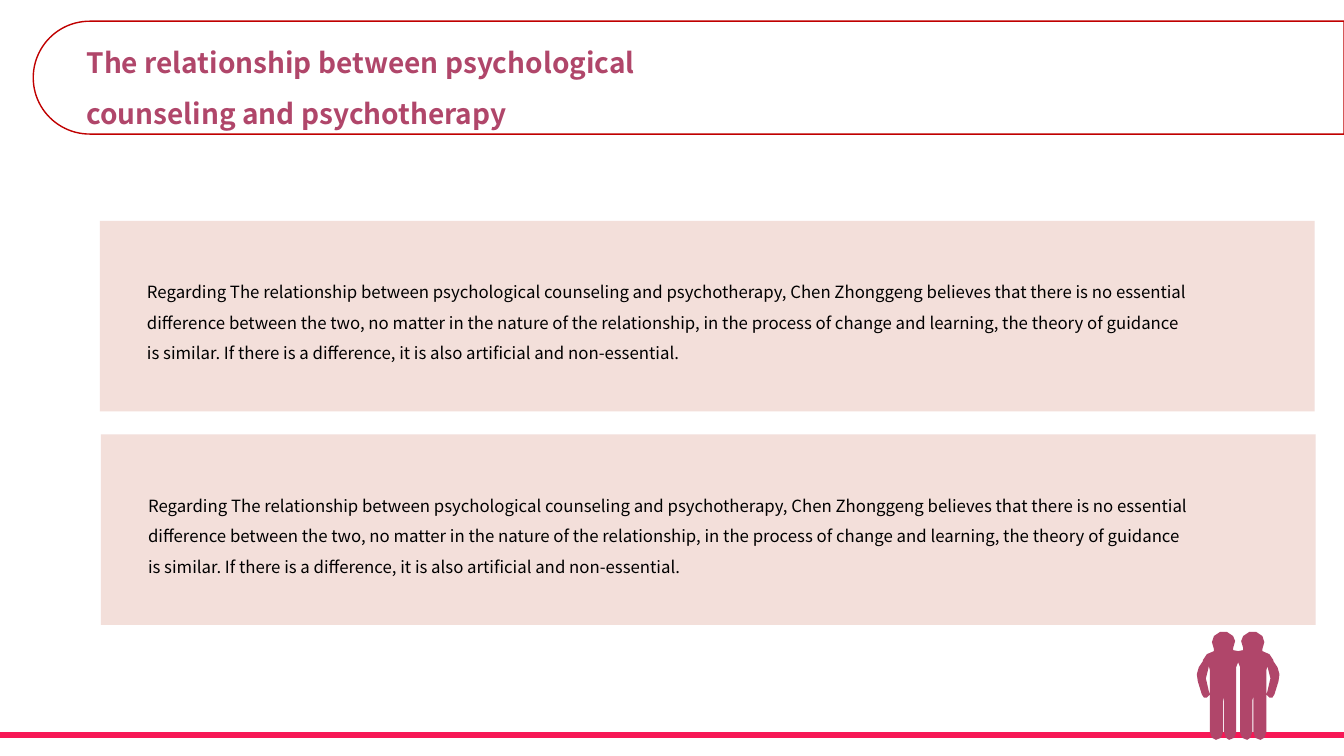
from dataclasses import dataclass

from lxml import etree
from pptx import Presentation
from pptx.dml.color import RGBColor
from pptx.enum import shapes, text
from pptx.oxml import ns
from pptx import util as u

# Grid: 133.3 columns by 75 rows, each a tenth of an inch
COLUMNS, ROWS = 133.3, 75
CELL = u.Inches(0.1)

FONT = "Noto Sans CJK SC"
BLACK = RGBColor(0x00, 0x00, 0x00)
PLUM = RGBColor(0xB0, 0x46, 0x6A)
BLUSH = RGBColor(0xEE, 0xD2, 0xCB)
DARK_RED = RGBColor(0xC0, 0x00, 0x00)
PINK = RGBColor(0xF7, 0x18, 0x56)

TITLE = "The relationship between psychological counseling and psychotherapy"
OPINION = (
    "Regarding The relationship between psychological counseling and psychotherapy, "
    "Chen Zhonggeng believes that there is no essential difference between the two, "
    "no matter in the nature of the relationship, in the process of change and learning, "
    "the theory of guidance is similar. If there is a difference, it is also artificial "
    "and non-essential."
)

# Right-hand person: columns from the middle of the pair, rows from the top
PERSON = [
    (0, 1.9), (0.5, 1.8), (0.5, 1.6), (0.3, 0.9), (0.5, 0.4), (1.1, 0),
    (1.8, 0), (2.4, 0.4), (2.6, 1), (2.4, 1.7), (2.4, 1.9), (3.1, 2.2),
    (3.5, 2.8), (3.5, 2.9), (3.9, 3.5), (4.1, 4.2), (4, 4.9), (3.6, 6.2),
    (3.4, 6.5), (3.1, 6.5), (2.8, 6.2), (2.9, 5.9), (3.2, 4.6), (2.9, 3.4),
    (2.8, 3.8), (2.8, 9.9), (2.6, 10.5), (2.2, 10.7), (1.7, 10.5), (1.5, 9.9),
    (1.5, 6.4), (1.4, 6.8), (1.4, 9.9), (1.2, 10.5), (0.9, 10.7), (0.4, 10.5),
    (0.2, 10), (0.2, 3.5), (0, 3),
]


@dataclass
class Frame:
    column: float
    row: float
    columns: float
    rows: float

    def lengths(self) -> list[int]:
        return [cells(n) for n in (self.column, self.row, self.columns, self.rows)]


def cells(count: float) -> int:
    return round(count * CELL)


def add_words(page, frame: Frame, words: str, size: int, color: RGBColor, bold: bool) -> None:
    box = page.shapes.add_textbox(*frame.lengths())
    box.text_frame.word_wrap = True
    box.text_frame.auto_size = text.MSO_AUTO_SIZE.SHAPE_TO_FIT_TEXT
    para = box.text_frame.paragraphs[0]
    para.line_spacing = 1.5
    span = para.add_run()
    span.text = words
    font_format = {"name": FONT, "size": u.Pt(size), "bold": bold}
    for name, value in font_format.items():
        setattr(span.font, name, value)
    span.font.color.rgb = color


def add_card(page, column: float, row: float) -> None:
    card = page.shapes.add_shape(
        shapes.MSO_SHAPE.RECTANGLE, *Frame(column, row, 120.5, 18.9).lengths())
    card.shadow.inherit = False
    card.line.fill.background()
    card.fill.solid()
    card.fill.fore_color.rgb = BLUSH
    tint = card.fill._xPr.find(".//" + ns.qn("a:srgbClr"))
    etree.SubElement(tint, ns.qn("a:alpha"), val="70000")
    add_words(page, Frame(column + 3.7, row + 4.6, 106, 9.7), OPINION, 12, BLACK, False)


def add_header_outline(page, frame: Frame) -> None:
    # The shape stands upright and is turned about its centre to lie in the frame
    upright = Frame(
        frame.column + (frame.columns - frame.rows) / 2,
        frame.row - (frame.columns - frame.rows) / 2,
        frame.rows, frame.columns)
    outline = page.shapes.add_shape(
        shapes.MSO_SHAPE.ROUND_2_SAME_RECTANGLE, *upright.lengths())
    outline.rotation = 270
    outline.adjustments[0] = 0.5
    outline.adjustments[1] = 0
    outline.shadow.inherit = False
    outline.fill.background()
    outline.line.color.rgb = DARK_RED
    outline.line.width = u.Pt(1)


def add_floor(page, row: float) -> None:
    floor = page.shapes.add_connector(
        shapes.MSO_CONNECTOR.STRAIGHT, 0, cells(row), cells(COLUMNS), cells(row))
    floor.line.color.rgb = PINK
    floor.line.width = u.Pt(4.5)
    etree.SubElement(floor._element.spPr, ns.qn("a:effectLst"))


def add_pair(page, middle: float, top: float) -> None:
    outline = PERSON + [(-x, y) for x, y in reversed(PERSON)]
    points = [(cells(middle + x), cells(top + y)) for x, y in outline]
    builder = page.shapes.build_freeform(*points[0])
    builder.add_line_segments(points[1:], close=True)
    pair = builder.convert_to_shape()
    pair.shadow.inherit = False
    pair.fill.solid()
    pair.fill.fore_color.rgb = PLUM
    pair.line.fill.background()


def main() -> None:
    deck = Presentation()
    deck.slide_width, deck.slide_height = cells(COLUMNS), cells(ROWS)
    page = deck.slides.add_slide(deck.slide_layouts[6])

    # Opinion cards
    for column, row in ((9.9, 21.9), (10, 43.1)):
        add_card(page, column, row)

    # Header
    add_words(page, Frame(7.6, 2.4, 65.4, 10.5), TITLE, 20, PLUM, True)
    add_header_outline(page, Frame(3.3, 2.1, 130, 11.2))

    # Floor line and the pair standing on it
    add_floor(page, 72.9)
    add_pair(page, 122.8, 62.7)

    deck.save("out.pptx")


if __name__ == "__main__":
    main()
